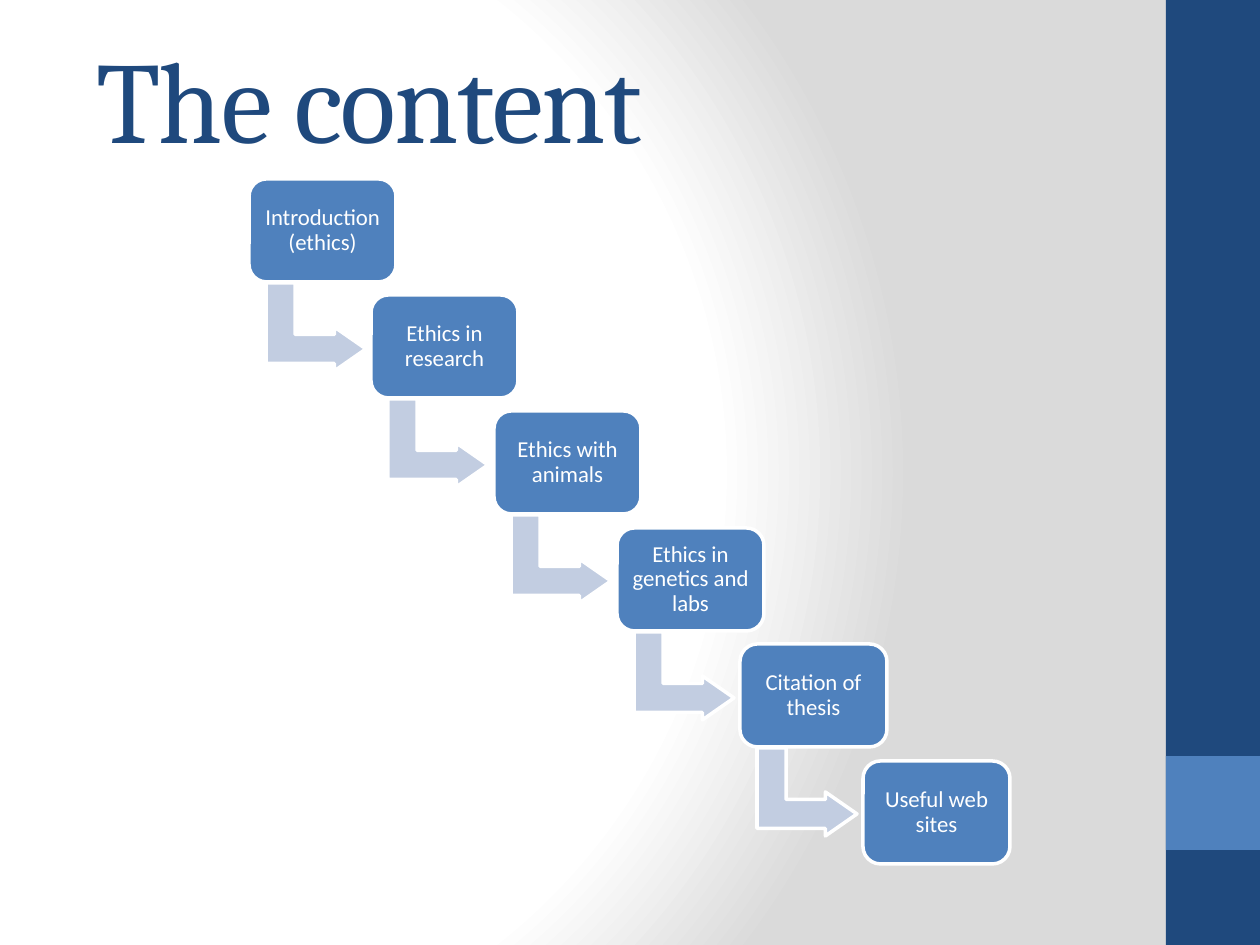
from dataclasses import dataclass

from lxml import etree
from pptx import Presentation
from pptx.dml.color import RGBColor
from pptx.enum.shapes import MSO_SHAPE
from pptx.enum.text import MSO_ANCHOR, PP_ALIGN
from pptx.util import Pt

RECT = MSO_SHAPE.RECTANGLE
ROUND = MSO_SHAPE.ROUNDED_RECTANGLE
BENT = MSO_SHAPE.BENT_UP_ARROW
LEFT, CENTER = PP_ALIGN.LEFT, PP_ALIGN.CENTER
MIDDLE, BOTTOM = MSO_ANCHOR.MIDDLE, MSO_ANCHOR.BOTTOM
SCALE = 914400 / 126
NS = "http://schemas.openxmlformats.org/drawingml/2006/main"


@dataclass(frozen=True)
class Theme:
    navy: str = "1F497D"
    blue: str = "4F81BD"
    pale: str = "C2CDE1"
    white: str = "FFFFFF"
    gray: str = "DADADA"
    head: str = "Cambria"
    body: str = "Calibri"
    big: int = 66
    small: int = 13
    edge: int = 2


def px(n):
    return round(n * SCALE)


class Deck:
    def __init__(self, theme):
        self.theme = theme
        self.prs = Presentation()
        self.prs.slide_width, self.prs.slide_height = px(1260), px(945)
        self.slide = self.prs.slides.add_slide(self.prs.slide_layouts[6])

    def glow(self, stops, rect):
        self.slide.background.fill.solid()
        old = self.slide.element.xpath(".//p:bgPr/a:solidFill")[0]
        marks = "".join(
            f'<a:gs pos="{pos * 1000}"><a:srgbClr val="{color}"/></a:gs>'
            for pos, color in stops)
        sides = " ".join(f'{k}="{v * 1000}"' for k, v in zip("ltrb", rect))
        grad = etree.fromstring(
            f'<a:gradFill xmlns:a="{NS}" rotWithShape="1"><a:gsLst>{marks}'
            f'</a:gsLst><a:path path="circle"><a:fillToRect {sides}/>'
            '</a:path></a:gradFill>')
        old.getparent().replace(old, grad)

    def shape(self, kind, box, color, edge=None, turn=0, adjust=()):
        item = self.slide.shapes.add_shape(kind, *map(px, box))
        item.shadow.inherit = False
        item.rotation = turn
        item.fill.solid()
        item.fill.fore_color.rgb = RGBColor.from_string(color)
        if edge:
            item.line.color.rgb = RGBColor.from_string(edge)
            item.line.width = Pt(self.theme.edge)
        else:
            item.line.fill.background()
        for i, value in enumerate(adjust):
            item.adjustments[i] = value
        return item

    def label(self, item, text, color, font, frame, para):
        body = item.text_frame
        line = body.paragraphs[0]
        run = line.add_run()
        run.text = text
        run.font.color.rgb = RGBColor.from_string(color)
        for part, style in ((body, frame), (line, para), (run.font, font)):
            for name, value in style.items():
                setattr(part, name, value)
        return line

    def title(self, text, box):
        item = self.slide.shapes.add_textbox(*map(px, box))
        self.label(
            item, text, self.theme.navy,
            {"name": self.theme.head, "size": Pt(self.theme.big)},
            {"word_wrap": True, "vertical_anchor": BOTTOM},
            {"alignment": LEFT})
        item.element.xpath(".//a:rPr")[0].set("spc", "-100")

    def step(self, text, box):
        item = self.shape(ROUND, box, self.theme.blue, self.theme.white,
                          adjust=(0.17,))
        sides = ("left", "top", "right", "bottom")
        frame = {f"margin_{side}": px(6) for side in sides}
        frame.update(word_wrap=True, vertical_anchor=MIDDLE)
        self.label(
            item, text, self.theme.white,
            {"name": self.theme.body, "size": Pt(self.theme.small)},
            frame, {"alignment": CENTER, "line_spacing": 0.9})

    def arrow(self, box):
        self.shape(BENT, box, self.theme.pale, self.theme.white,
                   turn=90, adjust=(0.33, 0.25, 0.36))


def main():
    theme = Theme()
    deck = Deck(theme)
    deck.glow([(0, theme.white), (75, theme.white), (100, theme.gray)],
              (20, 50, 100, 50))
    deck.shape(RECT, (1166, 0, 94, 945), theme.navy)
    deck.shape(RECT, (1166, 756, 94, 94), theme.blue)
    deck.title("The content", (84, 45, 1071, 128))

    topics = ["Introduction (ethics)", "Ethics in research",
              "Ethics with animals", "Ethics in genetics and labs",
              "Citation of thesis", "Useful web sites"]
    last = len(topics) - 1
    for i, topic in enumerate(topics):
        left = 249 + 614 * i // last
        top = 179 + 582 * i // last
        if i < last:
            deck.arrow((left + 23, top + 98, 88, 100))
        deck.step(topic, (left, top, 147, 103))
    deck.prs.save("out.pptx")


if __name__ == "__main__":
    main()
